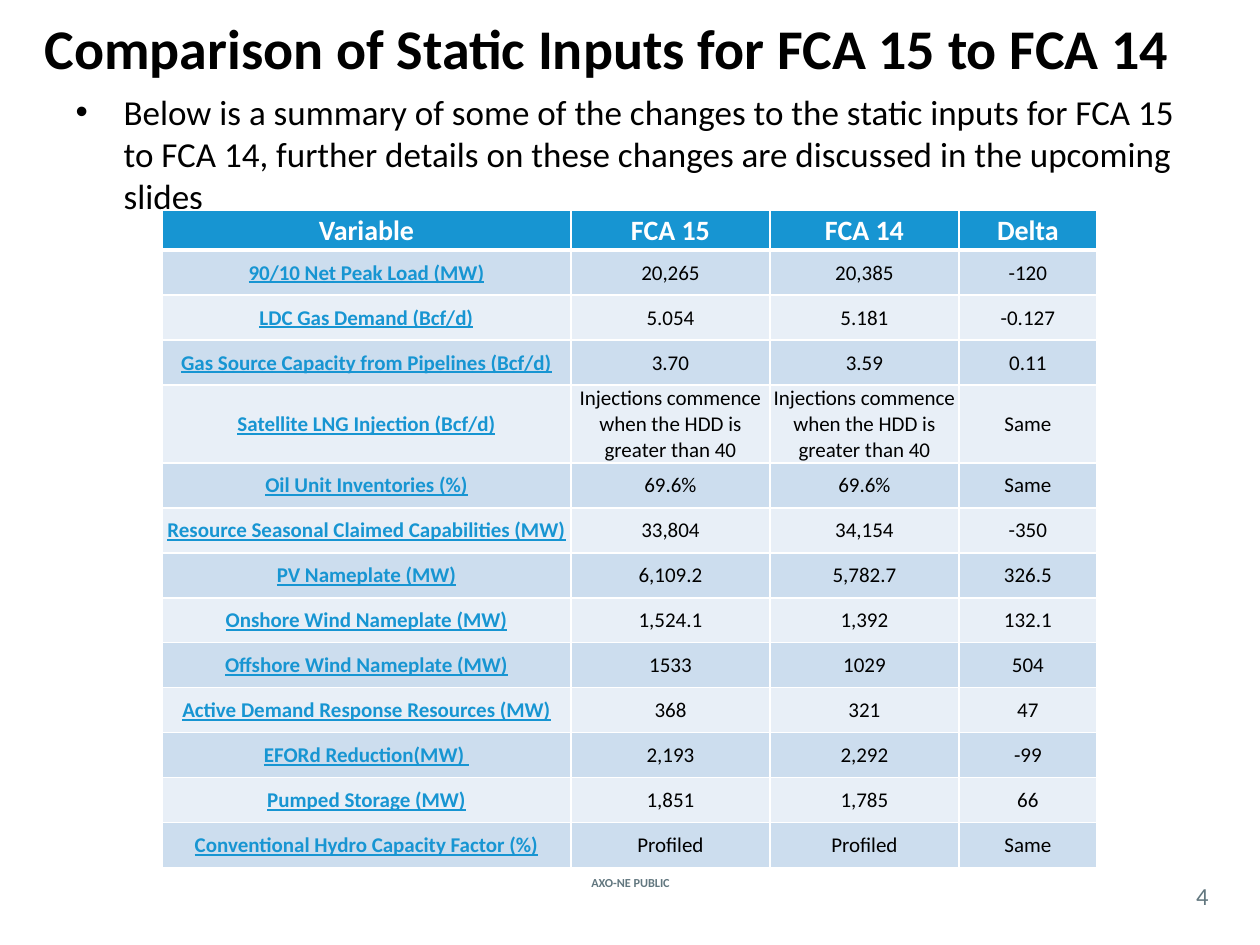
from dataclasses import dataclass

import pptx
import pptx.dml.color
import pptx.enum.text
import pptx.oxml
import pptx.oxml.ns
import pptx.util
from lxml import etree

PX = 914400 // 126  # EMU per px
ALIGN = pptx.enum.text.PP_ALIGN
MIDDLE = pptx.enum.text.MSO_ANCHOR.MIDDLE


@dataclass(frozen=True)
class Theme:
    font: str = "Calibri"
    ink: str = "000000"
    white: str = "FFFFFF"
    accent: str = "1795D2"
    muted: str = "62777F"
    bands: tuple = ("CCDDEE", "E8EFF7")
    title_size: int = 32
    body_size: int = 20
    header_size: int = 16
    cell_size: int = 12
    number_size: int = 14
    footer_size: int = 7
    grid_line: int = 1
    header_line: int = 3


def px(length):
    return pptx.util.Emu(length * PX)


def rgb(color):
    return pptx.dml.color.RGBColor.from_string(color)


class SlideBuilder:
    def __init__(self, slide, theme):
        self.slide = slide
        self.theme = theme

    def set_text(self, frame, text, size, color, bold=False, underline=False, align=ALIGN.CENTER):
        frame.text = text
        paragraph = frame.paragraphs[0]
        paragraph.alignment = align
        paragraph.space_before = pptx.util.Pt(0)
        font = paragraph.runs[0].font
        font.name, font.size = self.theme.font, pptx.util.Pt(size)
        font.bold, font.underline = bold, underline
        font.color.rgb = rgb(color)
        return paragraph

    def place(self, holder, left, top, width, height):
        holder.left, holder.top, holder.width, holder.height = map(px, (left, top, width, height))
        frame = holder.text_frame
        frame.word_wrap = True
        frame.auto_size = pptx.enum.text.MSO_AUTO_SIZE.NONE
        return frame

    def title(self, text, *box):
        frame = self.place(self.slide.shapes.title, *box)
        frame.vertical_anchor = MIDDLE
        self.set_text(frame, text, self.theme.title_size, self.theme.ink, bold=True, align=ALIGN.LEFT)

    def bullet(self, text, indent, *box):
        frame = self.place(self.slide.placeholders[1], *box)
        frame.vertical_anchor = pptx.enum.text.MSO_ANCHOR.TOP
        paragraph = self.set_text(frame, text, self.theme.body_size, self.theme.ink, align=ALIGN.LEFT)
        properties = paragraph._p.get_or_add_pPr()
        properties.set("marL", str(px(indent)))
        properties.set("indent", str(-px(indent)))
        etree.SubElement(properties, pptx.oxml.ns.qn("a:buChar"), char="•")

    def label(self, text, size, bold, *box):
        frame = self.place(self.slide.shapes.add_textbox(0, 0, 0, 0), *box)
        frame.margin_left = frame.margin_right = frame.margin_top = frame.margin_bottom = 0
        frame.vertical_anchor = MIDDLE
        self.set_text(frame, text, size, self.theme.muted, bold=bold)

    def borders(self, cell, **widths):
        properties = cell._tc.get_or_add_tcPr()
        for side in "LRTB":
            width = pptx.util.Pt(widths.get(side, self.theme.grid_line))
            properties.append(pptx.oxml.parse_xml(
                f'<a:ln{side} {pptx.oxml.ns.nsdecls("a")} w="{width}"><a:solidFill>'
                f'<a:srgbClr val="{self.theme.white}"/></a:solidFill></a:ln{side}>'))

    def table(self, rows, left, top, widths, heights):
        theme = self.theme
        grid = self.slide.shapes.add_table(
            len(rows), len(widths), px(left), px(top), px(sum(widths)), px(sum(heights))).table
        for column, width in zip(grid.columns, widths):
            column.width = px(width)
        for r, (values, height) in enumerate(zip(rows, heights)):
            grid.rows[r].height = px(height)
            for c, value in enumerate(values):
                cell = grid.cell(r, c)
                cell.margin_left = cell.margin_right = cell.margin_top = px(1)
                cell.margin_bottom = 0
                cell.vertical_anchor = MIDDLE
                if r == 0:
                    fill, lines = theme.accent, {"B": theme.header_line}
                    style = dict(size=theme.header_size, color=theme.white, bold=True)
                else:
                    fill = theme.bands[(r - 1) % 2]
                    lines = {"T": theme.header_line} if r == 1 else {}
                    variable = c == 0
                    style = dict(size=theme.cell_size, color=theme.accent if variable else theme.ink,
                                 bold=variable, underline=variable)
                self.borders(cell, **lines)
                cell.fill.solid()
                cell.fill.fore_color.rgb = rgb(fill)
                self.set_text(cell.text_frame, value, **style)


LNG_RULE = "Injections commence when the HDD is greater than 40"
STATIC_INPUTS = [
    ("Variable", "FCA 15", "FCA 14", "Delta"),
    ("90/10 Net Peak Load (MW)", "20,265", "20,385", "-120"),
    ("LDC Gas Demand (Bcf/d)", "5.054", "5.181", "-0.127"),
    ("Gas Source Capacity from Pipelines (Bcf/d)", "3.70", "3.59", "0.11"),
    ("Satellite LNG Injection (Bcf/d)", LNG_RULE, LNG_RULE, "Same"),
    ("Oil Unit Inventories (%)", "69.6%", "69.6%", "Same"),
    ("Resource Seasonal Claimed Capabilities (MW)", "33,804", "34,154", "-350"),
    ("PV Nameplate (MW)", "6,109.2", "5,782.7", "326.5"),
    ("Onshore Wind Nameplate (MW)", "1,524.1", "1,392", "132.1"),
    ("Offshore Wind Nameplate (MW)", "1533", "1029", "504"),
    ("Active Demand Response Resources (MW)", "368", "321", "47"),
    ("EFORd Reduction(MW) ", "2,193", "2,292", "-99"),
    ("Pumped Storage (MW)", "1,851", "1,785", "66"),
    ("Conventional Hydro Capacity Factor (%)", "Profiled", "Profiled", "Same"),
]


def main():
    theme = Theme()
    deck = pptx.Presentation()
    deck.slide_width, deck.slide_height = px(1260), px(945)
    builder = SlideBuilder(deck.slides.add_slide(deck.slide_layouts[1]), theme)

    # Footer and page number
    builder.label("AXO-NE PUBLIC", theme.footer_size, True, 538, 872, 185, 21)
    builder.label("4", theme.number_size, False, 1176, 878, 53, 36)

    # Heading and summary
    builder.title("Comparison of Static Inputs for FCA 15 to FCA 14", 32, -32, 1197, 158)
    builder.bullet(
        "Below is a summary of some of the changes to the static inputs for FCA 15 to FCA 14, "
        "further details on these changes are discussed in the upcoming slides",
        48, 63, 84, 1134, 126)

    # Comparison table: the wrapped LNG row is taller
    heights = [40] + [75 if LNG_RULE in row else 45 for row in STATIC_INPUTS[1:]]
    builder.table(STATIC_INPUTS, 162, 210, [409, 199, 189, 138], heights)

    deck.save("out.pptx")


if __name__ == "__main__":
    main()
